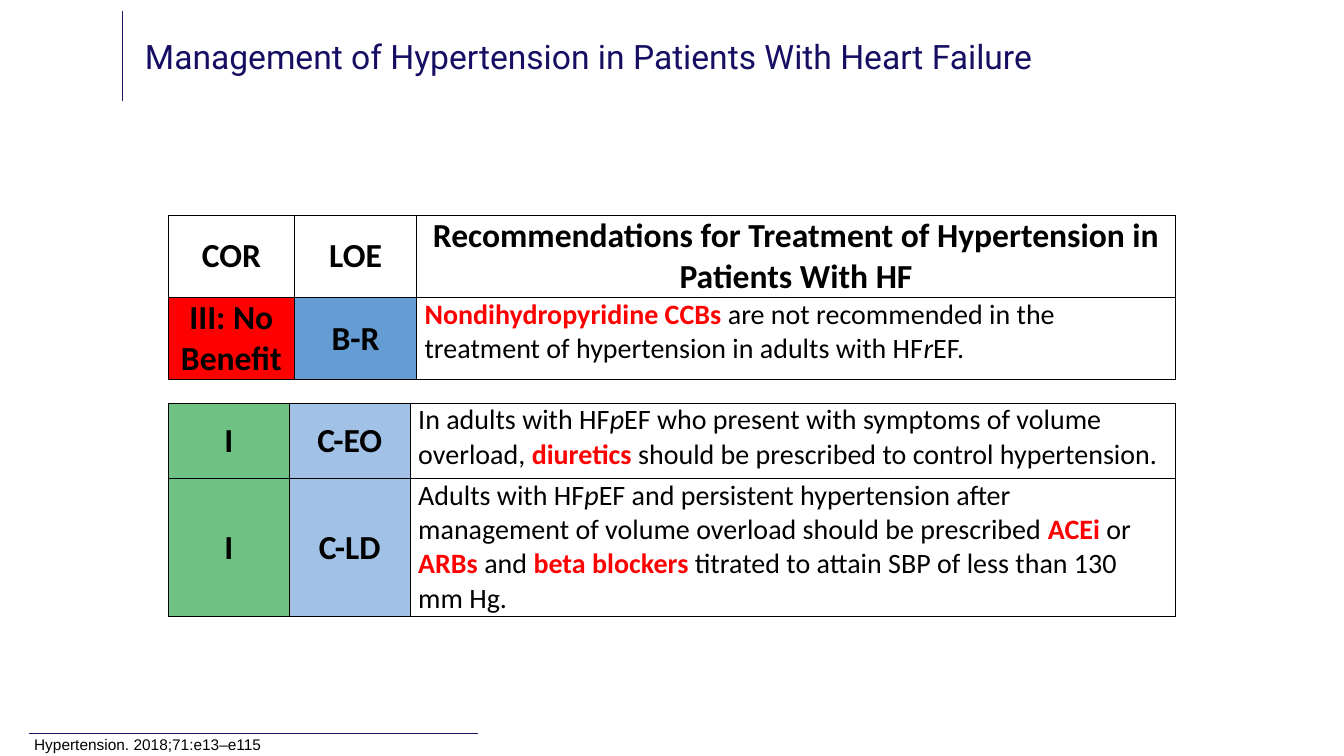
from dataclasses import dataclass

import pptx
import pptx.dml.color
import pptx.enum.shapes
import pptx.enum.text
import pptx.oxml
import pptx.oxml.ns
import pptx.util

Cm = pptx.util.Cm
Pt = pptx.util.Pt
ALIGN = pptx.enum.text.PP_ALIGN
ANCHOR = pptx.enum.text.MSO_ANCHOR


@dataclass(frozen=True)
class Theme:
    title: str = "160E63"
    rule: str = "1B1464"
    text: str = "000000"
    drug: str = "FF0000"
    paper: str = "FFFFFF"
    no_benefit: str = "FF0000"
    benefit: str = "6FC284"
    level_b: str = "659CD3"
    level_c: str = "A1C1E6"
    head_size: int = 24
    body_size: int = 20
    source_size: int = 11
    title_font: str = "Roboto"
    table_font: str = "Calibri"
    source_font: str = "Arial"


THEME = Theme()


def rgb(value):
    return pptx.dml.color.RGBColor.from_string(value)


def add_run(p, text, font=THEME.table_font, size=THEME.body_size,
            color=THEME.text, bold=False, italic=False):
    r = p.add_run()
    r.text = text
    r.font.name = font
    r.font.size = Pt(size)
    r.font.color.rgb = rgb(color)
    r.font.bold = bold
    r.font.italic = italic


def drug(text):
    return text, {"color": THEME.drug, "bold": True}


def italic(text):
    return text, {"italic": True}


def plain(text):
    return text, {}


def label(text):
    return [(text, {"size": THEME.head_size, "bold": True})]


def add_rule(s, x1, y1, x2, y2):
    line = s.shapes.add_connector(
        pptx.enum.shapes.MSO_CONNECTOR.STRAIGHT, Cm(x1), Cm(y1), Cm(x2), Cm(y2))
    line.line.color.rgb = rgb(THEME.rule)
    line.line.width = Pt(0.5)
    line._element.spPr.append(pptx.oxml.parse_xml(
        f"<a:effectLst {pptx.oxml.ns.nsdecls('a')}/>"))


def place(sp, left, top, width, height):
    sp.left, sp.top, sp.width, sp.height = Cm(left), Cm(top), Cm(width), Cm(height)


def add_title(s, text):
    sp = s.shapes.title
    place(sp, 3.4, 0.13, 24.36, 2.67)
    tf = sp.text_frame
    tf.word_wrap = True
    tf.vertical_anchor = ANCHOR.MIDDLE
    p = tf.paragraphs[0]
    p.alignment = ALIGN.LEFT
    p.line_spacing = 0.9
    add_run(p, text, font=THEME.title_font, size=THEME.head_size, color=THEME.title)


def add_source(s, text):
    sp = s.shapes.add_textbox(Cm(0.61), Cm(18.54), Cm(21.16), Cm(0.51))
    tf = sp.text_frame
    tf.word_wrap = True
    tf.vertical_anchor = ANCHOR.MIDDLE
    tf.margin_top = tf.margin_bottom = 0
    p = tf.paragraphs[0]
    p.line_spacing = 0.9
    add_run(p, text, font=THEME.source_font, size=THEME.source_size)


def set_borders(cell):
    tcPr = cell._tc.get_or_add_tcPr()
    for side in "LRTB":
        tcPr.append(pptx.oxml.parse_xml(
            f'<a:ln{side} {pptx.oxml.ns.nsdecls("a")} w="12700"><a:solidFill>'
            f'<a:srgbClr val="{THEME.text}"/></a:solidFill></a:ln{side}>'))


def fill_cell(cell, runs, fill, centered):
    set_borders(cell)
    cell.fill.solid()
    cell.fill.fore_color.rgb = rgb(fill)
    cell.margin_left = cell.margin_right = Cm(0.2)
    cell.margin_top = cell.margin_bottom = 0
    cell.vertical_anchor = ANCHOR.MIDDLE if centered else ANCHOR.TOP
    p = cell.text_frame.paragraphs[0]
    p.alignment = ALIGN.CENTER if centered else ALIGN.LEFT
    for text, style in runs:
        add_run(p, text, **style)


def add_grid(s, top, widths, heights, rows):
    tb = s.shapes.add_table(len(rows), len(widths), Cm(4.24), Cm(top),
                            Cm(sum(widths)), Cm(sum(heights))).table
    tb.first_row = tb.horz_banding = False
    for col, width in zip(tb.columns, widths):
        col.width = Cm(width)
    for row, height, cells in zip(tb.rows, heights, rows):
        row.height = Cm(height)
        for cell, (runs, fill, centered) in zip(row.cells, cells):
            fill_cell(cell, runs, fill, centered)


def head_row(*texts):
    return [(label(text), THEME.paper, True) for text in texts]


def advice_row(cor, cor_fill, loe, loe_fill, *runs):
    return [(label(cor), cor_fill, True), (label(loe), loe_fill, True),
            (runs, THEME.paper, False)]


def main():
    prs = pptx.Presentation()
    prs.slide_width, prs.slide_height = Cm(33.87), Cm(19.05)
    s = prs.slides.add_slide(prs.slide_layouts.get_by_name("Title Only"))

    add_rule(s, 3.08, 0.28, 3.08, 2.54)
    add_rule(s, 0.74, 18.47, 12.04, 18.47)
    add_title(s, "Management of Hypertension in Patients With Heart Failure")
    add_source(s, "Hypertension. 2018;71:e13–e115")

    add_grid(s, 5.43, [3.18, 3.08, 19.12], [2.07, 2.07], [
        head_row("COR", "LOE",
                 "Recommendations for Treatment of Hypertension in Patients With HF"),
        advice_row("III: No Benefit", THEME.no_benefit, "B-R", THEME.level_b,
                   drug("Nondihydropyridine CCBs"),
                   plain(" are not recommended in the treatment of hypertension "
                         "in adults with HF"),
                   italic("r"), plain("EF.")),
    ])
    add_grid(s, 10.16, [3.05, 3.05, 19.28], [1.9, 3.48], [
        advice_row("I", THEME.benefit, "C-EO", THEME.level_c,
                   plain("In adults with HF"), italic("p"),
                   plain("EF who present with symptoms of volume overload, "),
                   drug("diuretics"),
                   plain(" should be prescribed to control hypertension.")),
        advice_row("I", THEME.benefit, "C-LD", THEME.level_c,
                   plain("Adults with HF"), italic("p"),
                   plain("EF and persistent hypertension after management of "
                         "volume overload should be prescribed "),
                   drug("ACEi"), plain(" or "), drug("ARBs"), plain(" and "),
                   drug("beta blockers"),
                   plain(" titrated to attain SBP of less than 130 mm Hg.")),
    ])
    prs.save("out.pptx")


if __name__ == "__main__":
    main()
